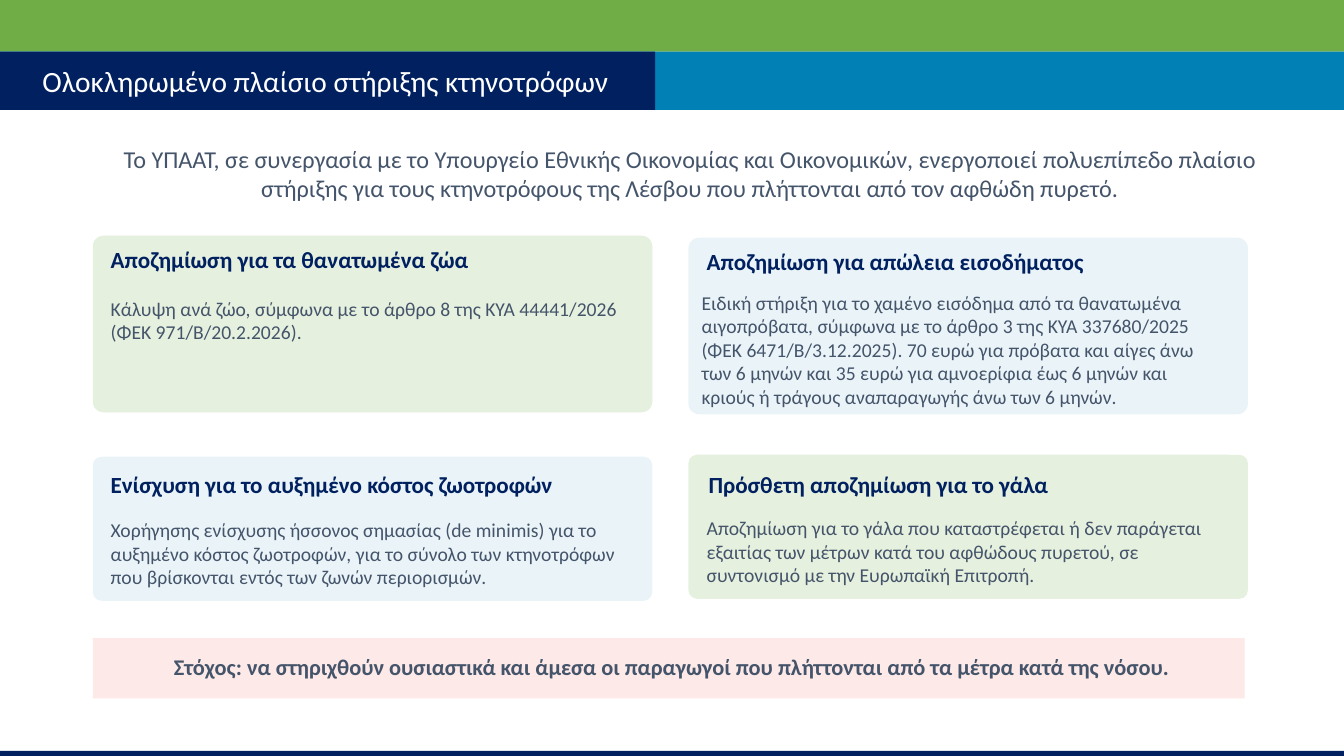
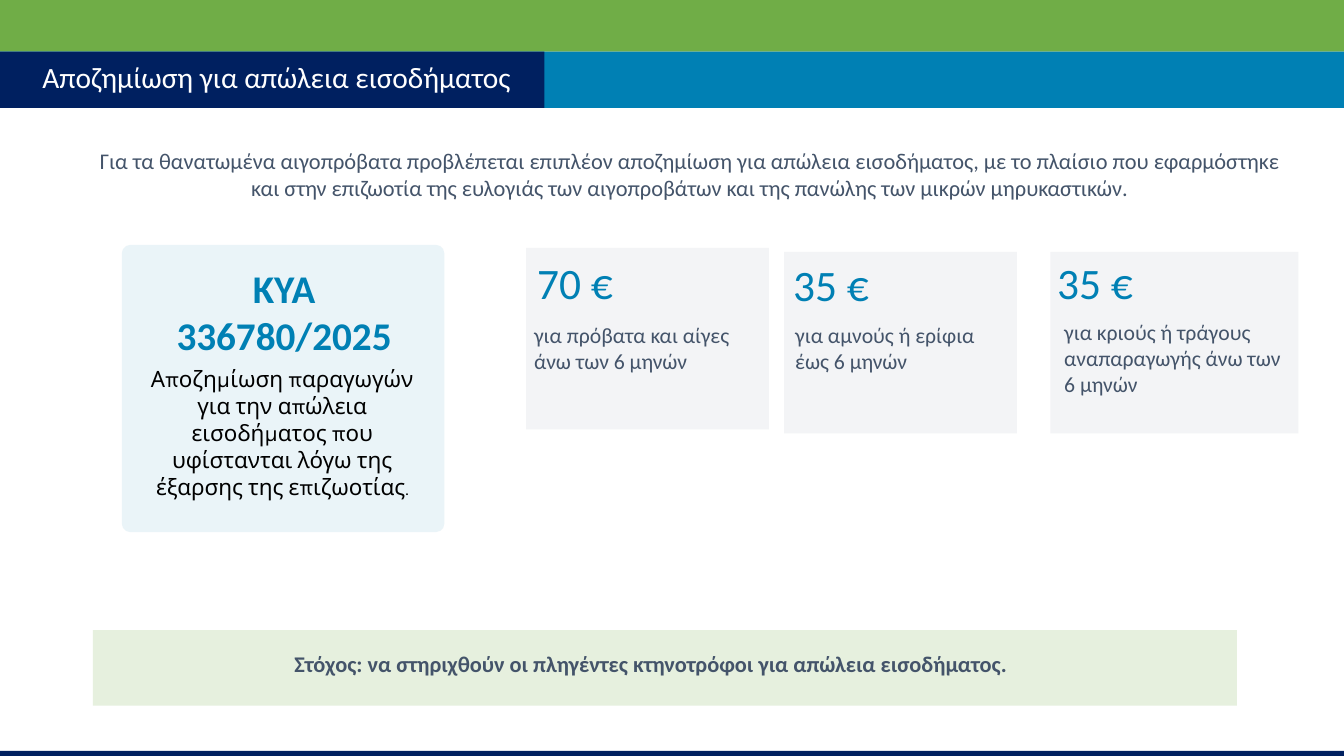
from pptx import Presentation
from pptx import util as u
from pptx.dml.color import RGBColor
from pptx.enum import shapes, text

NAVY, BLUE, GREEN = "002060", "0080B4", "70AD47"
SLATE, WHITE, BLACK = "44546A", "FFFFFF", "000000"
PALE_GREEN, PALE_BLUE, PALE_RED, PALE_GREY = "E6F0DE", "EAF4F8", "FDE9E7", "F3F4F6"
WIDTH, HEIGHT = 33.87, 19.05
BAND_TOP, MARGIN = 1.3, 2.34
LEFT, CENTER = text.PP_ALIGN.LEFT, text.PP_ALIGN.CENTER
TOP, MIDDLE = text.MSO_ANCHOR.TOP, text.MSO_ANCHOR.MIDDLE


def rgb(value):
    return RGBColor.from_string(value)


class Deck:
    def __init__(self):
        self.prs = Presentation()
        self.prs.slide_width = u.Cm(WIDTH)
        self.prs.slide_height = u.Cm(HEIGHT)
        self.s = None

    def slide(self, title, title_top, band_height, title_band_width):
        self.s = self.prs.slides.add_slide(self.prs.slide_layouts[5])
        self.box(0, 0, WIDTH, BAND_TOP, GREEN)
        self.box(0, BAND_TOP, WIDTH, band_height, BLUE)
        self.box(0, BAND_TOP, title_band_width, band_height, NAVY)
        self.box(0, HEIGHT - 0.13, WIDTH, 0.13, NAVY)
        sp = self.s.shapes.title
        self.s.shapes.element.append(sp.element)
        sp.left, sp.top = u.Cm(1.07), u.Cm(title_top)
        sp.width, sp.height = u.Cm(29.97), u.Cm(0.86)
        self.fill_text(sp.text_frame, [[(title, 21)]], WHITE)

    def box(self, x, y, w, h, fill, radius=None):
        kind = shapes.MSO_SHAPE.RECTANGLE if radius is None else shapes.MSO_SHAPE.ROUNDED_RECTANGLE
        sp = self.s.shapes.add_shape(kind, u.Cm(x), u.Cm(y), u.Cm(w), u.Cm(h))
        if radius is not None:
            sp.adjustments[0] = radius
        sp.shadow.inherit = False
        sp.fill.solid()
        sp.fill.fore_color.rgb = rgb(fill)
        sp.line.fill.background()

    def fill_text(self, tf, paragraphs, color, bold=False, align=LEFT, anchor=MIDDLE, font="Calibri"):
        tf.word_wrap = True
        tf.auto_size = text.MSO_AUTO_SIZE.NONE
        tf.vertical_anchor = anchor
        tf.margin_left = tf.margin_top = tf.margin_right = tf.margin_bottom = 0
        for i, runs in enumerate(paragraphs):
            p = tf.add_paragraph() if i else tf.paragraphs[0]
            p.alignment = align
            for words, size in runs:
                r = p.add_run()
                r.text = words
                r.font.name = font
                r.font.size = u.Pt(size)
                r.font.bold = bold
                r.font.color.rgb = rgb(color)

    def label(self, x, y, w, h, paragraphs, color=SLATE, **style):
        sp = self.s.shapes.add_textbox(u.Cm(x), u.Cm(y), u.Cm(w), u.Cm(h))
        self.fill_text(sp.text_frame, paragraphs, color, **style)

    def intro(self, y, h, words, size):
        self.label(MARGIN, y, 30.1, h, [[(words, size)]], align=CENTER)

    def measure(self, card, heading_at, body_at, fill, heading, body):
        x, y, h = card
        self.box(x, y, 14.1, h, fill, 0.06)
        self.label(*heading_at, 13.18, 0.97, [[(heading, 16.5)]], NAVY, bold=True)
        self.label(*body_at, 13.18, 1.85, [[(body, 14)]], anchor=TOP)

    def price(self, card, amount_at, note_at, amount, note):
        x, y, w = card
        self.box(x, y, w, 4.57, PALE_GREY)
        self.label(*amount_at, 5, 1.57, [[(amount, 31)]], BLUE)
        note_x, note_y, note_w = note_at
        self.label(note_x, note_y, note_w, 2.67, [[(note, 15.5)]], anchor=TOP)

    def goal(self, bar, label_at, fill, words):
        y, w, h = bar
        self.box(MARGIN, y, w, h, fill)
        self.label(*label_at, 0.58, [[(words, 16)]], bold=True, align=CENTER)


def support_framework(deck):
    deck.slide("Ολοκληρωμένο πλαίσιο στήριξης κτηνοτρόφων", 1.6, 1.47, 16.51)
    deck.intro(3.68, 1.4,
               "Το ΥΠΑΑΤ, σε συνεργασία με το Υπουργείο Εθνικής Οικονομίας και Οικονομικών, "
               "ενεργοποιεί πολυεπίπεδο πλαίσιο στήριξης για τους κτηνοτρόφους της Λέσβου "
               "που πλήττονται από τον αφθώδη πυρετό.", 17.3)
    measures = [
        ((MARGIN, 5.94, 4.45), (2.79, 6.05), (2.79, 7.47), PALE_GREEN,
         "Αποζημίωση για τα θανατωμένα ζώα",
         "Κάλυψη ανά ζώο, σύμφωνα με το άρθρο 8 της ΚΥΑ 44441/2026 (ΦΕΚ 971/Β/20.2.2026)."),
        ((17.35, 5.99, 4.45), (17.81, 6.1), (17.68, 7.32), PALE_BLUE,
         "Αποζημίωση για απώλεια εισοδήματος",
         "Ειδική στήριξη για το χαμένο εισόδημα από τα θανατωμένα αιγοπρόβατα, σύμφωνα με "
         "το άρθρο 3 της ΚΥΑ 337680/2025 (ΦΕΚ 6471/Β/3.12.2025). 70 ευρώ για πρόβατα και "
         "αίγες άνω των 6 μηνών και 35 ευρώ για αμνοερίφια έως 6 μηνών και κριούς ή "
         "τράγους αναπαραγωγής άνω των 6 μηνών."),
        ((MARGIN, 11.51, 3.63), (2.79, 11.71), (2.79, 13.06), PALE_BLUE,
         "Ενίσχυση για το αυξημένο κόστος ζωοτροφών",
         "Χορήγησης ενίσχυσης ήσσονος σημασίας (de minimis) για το αυξημένο κόστος "
         "ζωοτροφών, για το σύνολο των κτηνοτρόφων που βρίσκονται εντός των ζωνών "
         "περιορισμών."),
        ((17.35, 11.46, 3.63), (17.86, 11.71), (17.81, 13), PALE_GREEN,
         "Πρόσθετη αποζημίωση για το γάλα",
         "Αποζημίωση για το γάλα που καταστρέφεται ή δεν παράγεται εξαιτίας των μέτρων "
         "κατά του αφθώδους πυρετού, σε συντονισμό με την Ευρωπαϊκή Επιτροπή."),
    ]
    for measure in measures:
        deck.measure(*measure)
    deck.goal((16.08, 29.03, 1.52), (3, 16.51, 27.86), PALE_RED,
              "Στόχος: να στηριχθούν ουσιαστικά και άμεσα οι παραγωγοί που πλήττονται "
              "από τα μέτρα κατά της νόσου.")


def income_loss(deck):
    deck.slide("Αποζημίωση για απώλεια εισοδήματος", 1.5, 1.42, 13.72)
    deck.intro(3.61, 1.57,
               "Για τα θανατωμένα αιγοπρόβατα προβλέπεται επιπλέον αποζημίωση για απώλεια "
               "εισοδήματος, με το πλαίσιο που εφαρμόστηκε και στην επιζωοτία της ευλογιάς "
               "των αιγοπροβάτων και της πανώλης των μικρών μηρυκαστικών.", 16)
    prices = [
        ((13.26, 6.25, 6.12), (13.54, 6.32), (13.46, 8.1, 5.92),
         "70 €", "για πρόβατα και αίγες άνω των 6 μηνών"),
        ((19.76, 6.35, 5.87), (19.99, 6.38), (20.04, 8.1, 5.26),
         "35 €", "για αμνούς ή ερίφια έως 6 μηνών"),
        ((26.47, 6.35, 6.25), (26.64, 6.32), (26.82, 8.03, 5.61),
         "35 €", "για κριούς ή τράγους αναπαραγωγής άνω των 6 μηνών"),
    ]
    for price in prices:
        deck.price(*price)
    deck.goal((15.88, 28.83, 1.9), (2.69, 16.43, 27.43), PALE_GREEN,
              "Στόχος: να στηριχθούν οι πληγέντες κτηνοτρόφοι για απώλεια εισοδήματος.")
    deck.box(3.07, 6.17, 8.13, 7.24, PALE_BLUE, 0.03)
    deck.label(3.86, 6.68, 6.6, 2.34, [[("ΚΥΑ", 28)], [("336780/2025", 28)]], BLUE,
               bold=True, align=CENTER)
    deck.label(3.76, 9.75, 6.71, 2.29,
               [[("Αποζημίωση παραγωγών για την απώλεια εισοδήματος που υφίστανται λόγω "
                  "της έξαρσης της επιζωοτίας", 16), (".", 12)]],
               BLACK, align=CENTER, font="Karla")


def main():
    deck = Deck()
    support_framework(deck)
    income_loss(deck)
    deck.prs.save("out.pptx")


if __name__ == "__main__":
    main()
